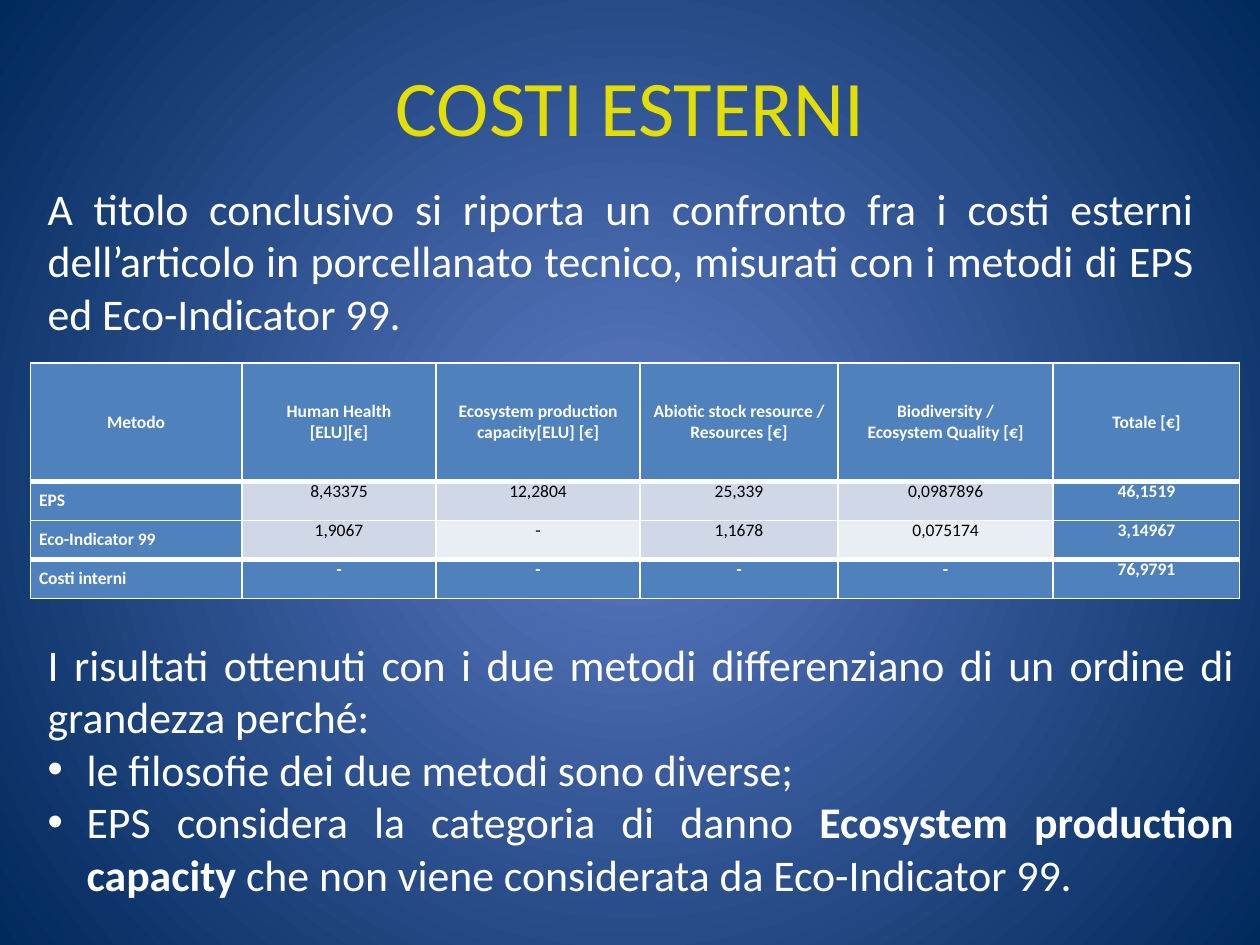
from lxml import etree
from pptx import Presentation
from pptx.dml.color import RGBColor
from pptx.enum.text import MSO_ANCHOR, PP_ALIGN
from pptx.oxml.ns import qn
from pptx.util import Inches, Pt

LEFT, CENTER, JUSTIFY = PP_ALIGN.LEFT, PP_ALIGN.CENTER, PP_ALIGN.JUSTIFY
TOP, MIDDLE = MSO_ANCHOR.TOP, MSO_ANCHOR.MIDDLE
COLORS = {"glow": "5E7CC5", "edge": "00295C", "title": "E3DE00", "white": "FFFFFF",
          "black": "000000", "header": "4F81BD", "band": "D0D8E8", "light": "E9EDF4"}


def style_paragraph(p, size, color, align, bold=False):
    p.alignment = align
    for r in p.runs:
        r.font.name, r.font.size, r.font.bold = "Calibri", Pt(size), bold
        r.font.color.rgb = RGBColor.from_string(COLORS[color])


def add_text(left, top, width, height, lines, size, color, align, anchor=TOP):
    tf = s.shapes.add_textbox(Inches(left), Inches(top), Inches(width), Inches(height)).text_frame
    tf.word_wrap = True
    tf.vertical_anchor = anchor
    tf.text = "\n".join(lines)
    for p in tf.paragraphs:
        style_paragraph(p, size, color, align)
    return tf


prs = Presentation()
prs.slide_width, prs.slide_height = Inches(10), Inches(7.5)
s = prs.slides.add_slide(prs.slide_layouts[6])

# Radial background
fill = s.background.fill
fill.gradient()
for stop, name in zip(fill.gradient_stops, ("glow", "edge")):
    stop.color.rgb = RGBColor.from_string(COLORS[name])
grad = s.element.find(".//" + qn("a:gradFill"))
grad.remove(grad.find(qn("a:lin")))
circle = etree.SubElement(grad, qn("a:path"), path="circle")
etree.SubElement(circle, qn("a:fillToRect"), l="50000", t="50000", r="50000", b="50000")

# Title
add_text(0, 0.21, 10, 1.25, ["COSTI ESTERNI"], 45, "title", CENTER, MIDDLE)

# Cost table
rows = [
    ["Metodo", "Human Health\n[ELU][€]", "Ecosystem production capacity[ELU] [€]",
     "Abiotic stock resource /\nResources [€]", "Biodiversity /\nEcosystem Quality [€]",
     "Totale [€]"],
    ["EPS", "8,43375", "12,2804", "25,339", "0,0987896", "46,1519"],
    ["Eco-Indicator 99", "1,9067", "-", "1,1678", "0,075174", "3,14967"],
    ["Costi interni", "-", "-", "-", "-", "76,9791"],
]
col_widths = [1.68, 1.54, 1.62, 1.57, 1.71, 1.48]
row_heights = [0.94, 0.31, 0.31, 0.31]
light_cells = {(2, 2), (2, 4)}
last_row, last_col = len(rows) - 1, len(col_widths) - 1

table = s.shapes.add_table(len(rows), len(col_widths), Inches(0.24), Inches(2.88),
                           Inches(sum(col_widths)), Inches(sum(row_heights))).table
table.first_row = table.horz_banding = False
for column, width in zip(table.columns, col_widths):
    column.width = Inches(width)
for row, height in zip(table.rows, row_heights):
    row.height = Inches(height)

for i, row in enumerate(rows):
    for j, text in enumerate(row):
        cell = table.cell(i, j)
        cell.text = text
        cell.margin_left = cell.margin_right = Inches(0.07)
        cell.margin_top = cell.margin_bottom = 0
        cell.vertical_anchor = MIDDLE if i == 0 or j == 0 else TOP
        inner = 0 < i < last_row and 0 < j < last_col
        for p in cell.text_frame.paragraphs:
            style_paragraph(p, 10, "black" if inner else "white",
                            LEFT if i and j == 0 else CENTER, not inner)

        # Borders: thick below the header and above the last row
        thick = {"T": i in (1, last_row), "B": i in (0, last_row - 1)}
        for side in "LRTB":
            ln = etree.SubElement(cell._tc.get_or_add_tcPr(), qn("a:ln" + side),
                                  w=str(Pt(3 if thick.get(side) else 1)))
            solid = etree.SubElement(ln, qn("a:solidFill"))
            etree.SubElement(solid, qn("a:srgbClr"), val=COLORS["white"])
        name = "light" if (i, j) in light_cells else "band" if inner else "header"
        cell.fill.solid()
        cell.fill.fore_color.rgb = RGBColor.from_string(COLORS[name])

# Introduction
add_text(0.28, 1.39, 9.29, 1.97, [
    "A titolo conclusivo si riporta un confronto fra i costi esterni dell’articolo in "
    "porcellanato tecnico, misurati con i metodi di EPS ed Eco-Indicator 99."],
    25, "white", JUSTIFY)

# Conclusions
tf = add_text(0.28, 5.01, 9.61, 2.2, [
    "I risultati ottenuti con i due metodi differenziano di un ordine di grandezza perché:",
    "le filosofie dei due metodi sono diverse;",
    "EPS considera la categoria di danno "], 25, "white", JUSTIFY)
p = tf.paragraphs[-1]
for text in ("Ecosystem production capacity", " che non viene considerata da Eco-Indicator 99."):
    p.add_run().text = text
style_paragraph(p, 25, "white", JUSTIFY)
p.runs[1].font.bold = True
for p in tf.paragraphs[1:]:
    pPr = p._p.get_or_add_pPr()
    pPr.set("marL", str(Inches(0.31)))
    pPr.set("indent", str(-Inches(0.31)))
    etree.SubElement(pPr, qn("a:buFont"), typeface="Arial")
    etree.SubElement(pPr, qn("a:buChar"), char="•")

prs.save("out.pptx")
